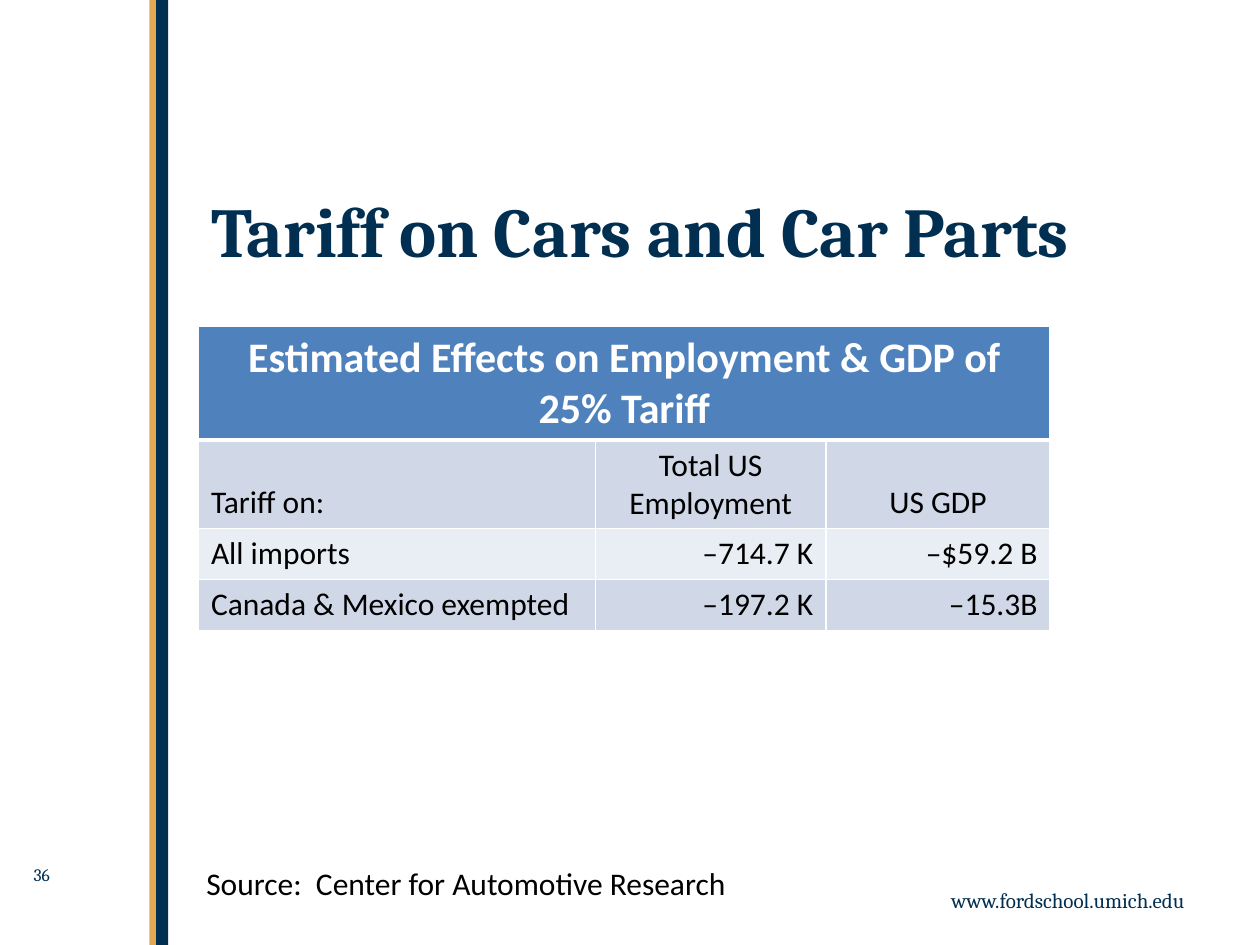
from lxml import etree
from pptx import Presentation
from pptx.dml.color import RGBColor
from pptx.enum import shapes, text
from pptx.oxml import ns
from pptx.util import Cm, Pt

HUES = {"navy": "002F52", "gold": "E3A856", "blue": "4F81BD", "dark": "D0D8E8",
        "pale": "E9EDF4", "white": "FFFFFF", "black": "000000"}
LEFT, MID, RIGHT = text.PP_ALIGN.LEFT, text.PP_ALIGN.CENTER, text.PP_ALIGN.RIGHT
ROWS = [("Tariff on:", "Total US Employment", "US GDP"),
        ("All imports", "–714.7 K", "–$59.2 B"),
        ("Canada & Mexico exempted", "–197.2 K", "–15.3B")]
WIDTHS = (8, 4.65, 4.52)
HEIGHTS = (2.29, 1.77, 1.03, 1.03)


def hue(name):
    """Return the named colour."""
    return RGBColor.from_string(HUES[name])


def write(frame, words, size=18, face="Calibri", ink="black", bold=False, align=LEFT):
    """Put formatted text in a frame."""
    frame.word_wrap = True
    para = frame.paragraphs[0]
    para.alignment = align
    run = para.add_run()
    run.text = words
    font = run.font
    font.size, font.name, font.bold = Pt(size), face, bold
    font.color.rgb = hue(ink)


def label(slide, box, words, **style):
    """Add a text box."""
    write(slide.shapes.add_textbox(*map(Cm, box)).text_frame, words, **style)


def bar(slide, box, ink):
    """Add a plain filled bar."""
    shape = slide.shapes.add_shape(shapes.MSO_SHAPE.RECTANGLE, *map(Cm, box))
    shape.shadow.inherit = False
    shape.fill.solid()
    shape.fill.fore_color.rgb = hue(ink)
    shape.line.fill.background()


def stripes(slide, box):
    """Draw the navy and gold side bars."""
    left, top, width, height = box
    thin = width / 3
    bar(slide, (left + thin, top, 2 * thin, height), "navy")
    bar(slide, (left, top, thin, height), "gold")


def edge(cell, base):
    """Draw white cell borders with a given base width."""
    props = cell._tc.get_or_add_tcPr()
    sides = zip(("lnL", "lnR", "lnT", "lnB"), (1, 1, 1, base))
    for spot, (side, width) in enumerate(sides):
        line = etree.Element(ns.qn(f"a:{side}"), w=str(Pt(width)))
        fill = etree.SubElement(line, ns.qn("a:solidFill"))
        etree.SubElement(fill, ns.qn("a:srgbClr"), val=HUES["white"])
        props.insert(spot, line)


def effects(slide, box):
    """Build the table of tariff effects."""
    frame = slide.shapes.add_table(len(HEIGHTS), len(WIDTHS), *map(Cm, box))
    table = frame.table
    for col, width in zip(table.columns, WIDTHS):
        col.width = Cm(width)
    for row, height in zip(table.rows, HEIGHTS):
        row.height = Cm(height)
    head = table.cell(0, 0)
    head.merge(table.cell(0, len(WIDTHS) - 1))
    write(head.text_frame, "Estimated Effects on Employment & GDP of 25% Tariff",
          size=24, ink="white", bold=True, align=MID)
    for r, row in enumerate(table.rows):
        for c, cell in enumerate(row.cells):
            cell.fill.solid()
            cell.fill.fore_color.rgb = hue("blue" if r == 0 else "dark" if r % 2 else "pale")
            edge(cell, 1 if r else 3)
            if r:
                cell.vertical_anchor = text.MSO_ANCHOR.BOTTOM if r == 1 else text.MSO_ANCHOR.TOP
                align = LEFT if c == 0 else MID if r == 1 else RIGHT
                write(cell.text_frame, ROWS[r - 1][c], align=align)


def footer(slide, box):
    """Place the page number, source and web address."""
    left, top, width, height = box
    brand = {"face": "Cambria", "ink": "navy"}
    label(slide, (left, top, 2.34, 0.86), "36", size=10, **brand)
    label(slide, (left + 3.48, top, 12.47, height), "Source:  Center for Automotive Research")
    label(slide, (left + width - 6.35, top + 0.48, 6.35, 0.76),
          "www.fordschool.umich.edu", size=12, align=RIGHT, **brand)


def main():
    """Build and save the deck."""
    deck = Presentation()
    deck.slide_width, deck.slide_height = Cm(25.4), Cm(19.05)
    slide = deck.slides.add_slide(deck.slide_layouts[6])
    stripes(slide, (3.01, 0, 0.38, 19.05))
    label(slide, (4.01, 3.66, 20.12, 3.12), "Tariff on Cars and Car Parts",
          size=40, face="Cambria", ink="navy", bold=True)
    effects(slide, (4, 6.58, sum(WIDTHS), sum(HEIGHTS)))
    footer(slide, (0.43, 17.29, 23.7, 1.02))
    deck.save("out.pptx")


if __name__ == "__main__":
    main()
